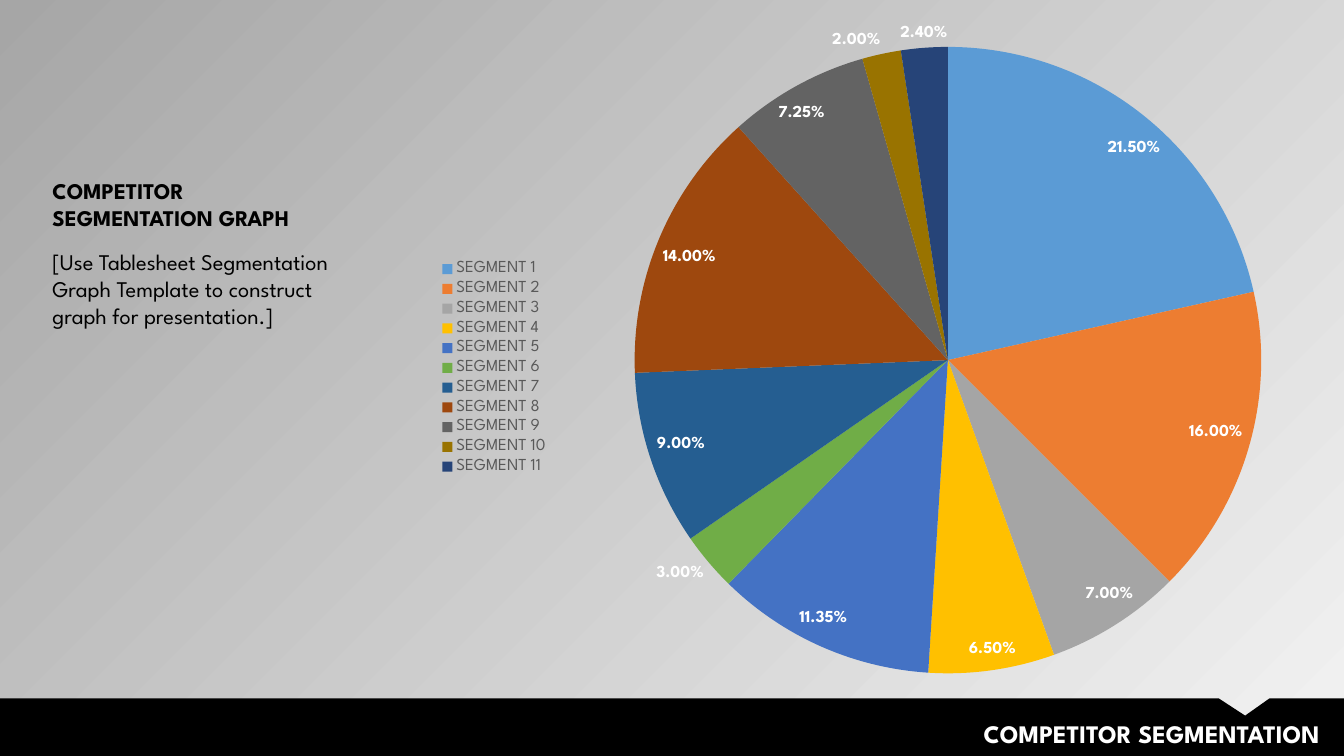
from lxml.etree import SubElement
from pptx import Presentation
from pptx.chart.data import CategoryChartData
from pptx.dml.color import RGBColor
from pptx.enum.chart import XL_CHART_TYPE, XL_LABEL_POSITION, XL_LEGEND_POSITION
from pptx.enum.text import MSO_ANCHOR, MSO_AUTO_SIZE, PP_ALIGN
from pptx.oxml.ns import qn
from pptx.util import Inches, Pt

TITLE = "COMPETITOR SEGMENTATION"
BODY = [
    ("COMPETITOR SEGMENTATION GRAPH", True),
    ("[Use Tablesheet Segmentation Graph Template to construct graph for presentation.]", False),
]
# Share and colour of each segment
PARTS = [
    (0.215, "5B9BD5"), (0.16, "ED7D31"), (0.07, "A5A5A5"), (0.065, "FFC000"),
    (0.1135, "4472C4"), (0.03, "70AD47"), (0.09, "255E91"), (0.14, "9E480E"),
    (0.0725, "636363"), (0.02, "997300"), (0.024, "264478"),
]
PLOT = {"x": 0.244, "y": 0.065, "w": 0.749, "h": 0.849}
FONT = "League Spartan"
HEX = {"light": "F2F2F2", "dark": "A6A6A6", "black": "000000",
       "white": "FFFFFF", "key": "595959"}
WIDE, HIGH = 13.33, 7.5
BAR = 6.93
BANNER = [(0, BAR), (12.09, BAR), (12.35, 7.1), (12.59, BAR),
          (WIDE, BAR), (WIDE, HIGH), (0, HIGH)]


def color(name):
    return RGBColor.from_string(HEX[name])


def style(font, size, name, bold=False):
    font.name, font.size, font.bold = FONT, Pt(size), bold
    font.color.rgb = color(name)


def place(shape, left, top, width, height):
    shape.left, shape.top = Inches(left), Inches(top)
    shape.width, shape.height = Inches(width), Inches(height)
    frame = shape.text_frame
    frame.word_wrap = True
    frame.auto_size = MSO_AUTO_SIZE.NONE
    frame.vertical_anchor = MSO_ANCHOR.MIDDLE
    return frame


prs = Presentation()
prs.slide_width, prs.slide_height = Inches(WIDE), Inches(HIGH)
slide = prs.slides.add_slide(prs.slide_layouts[1])
title, body = slide.placeholders

# Background
fill = slide.background.fill
fill.gradient()
fill.gradient_angle = 135
for stop, name in zip(fill.gradient_stops, ("light", "dark")):
    stop.color.rgb = color(name)

# Notched banner, behind the title
points = [(Inches(x), Inches(y)) for x, y in BANNER]
path = slide.shapes.build_freeform(*points[0])
path.add_line_segments(points[1:], close=True)
banner = path.convert_to_shape()
banner.shadow.inherit = False
banner.fill.solid()
banner.fill.fore_color.rgb = color("black")
banner.line.fill.background()
title.element.addprevious(banner.element)

# Title
frame = place(title, 6.41, 7.08, 6.78, 0.4)
frame.text = TITLE
para = frame.paragraphs[0]
para.alignment = PP_ALIGN.RIGHT
style(para.runs[0].font, 18, "white", True)

# Description, set a little above the middle of its box
frame = place(body, 0.42, 1.34, 3.08, 2.77)
frame.margin_bottom = Inches(0.48)
frame.text = "\n".join(text for text, bold in BODY)
for para, (text, bold) in zip(frame.paragraphs, BODY):
    para.space_before, para.space_after = Pt(0), Pt(12)
    style(para.runs[0].font, 16, "black", bold)
    props = para._p.get_or_add_pPr()
    props.set("marL", "0")
    props.set("indent", "0")
    SubElement(props, qn("a:buNone"))

# Pie chart
data = CategoryChartData(number_format="0.00%")
data.categories = [f"SEGMENT {i}" for i in range(1, len(PARTS) + 1)]
data.add_series("Series 1", [share for share, tint in PARTS])
chart = slide.shapes.add_chart(
    XL_CHART_TYPE.PIE, Inches(4.25), Inches(-0.01), Inches(8.33), Inches(7.32), data).chart
chart.has_title = False
style(chart.font, 12, "black")
chart.has_legend = True
chart.legend.position = XL_LEGEND_POSITION.LEFT
chart.legend.include_in_layout = False
style(chart.legend.font, 12, "key")

plot = chart.plots[0]
plot.vary_by_categories = True
series = plot.series[0]
for i, (share, tint) in enumerate(PARTS):
    fill = series.points[i].format.fill
    fill.solid()
    fill.fore_color.rgb = RGBColor.from_string(tint)

labels = series.data_labels
labels.show_value = True
labels.show_percentage = False
labels.number_format = "0.00%"
labels.number_format_is_linked = False
labels.position = XL_LABEL_POSITION.BEST_FIT
style(labels.font, 12, "white", True)

# Fixed plot area
area = chart.element.find(".//" + qn("c:plotArea"))
layout = area.find(qn("c:layout"))
if layout is None:
    layout = SubElement(area, qn("c:layout"))
    area.insert(0, layout)
manual = SubElement(layout, qn("c:manualLayout"))
rules = {"layoutTarget": "inner", "xMode": "edge", "yMode": "edge", **PLOT}
for tag, value in rules.items():
    SubElement(manual, qn("c:" + tag)).set("val", str(value))

prs.save("out.pptx")
